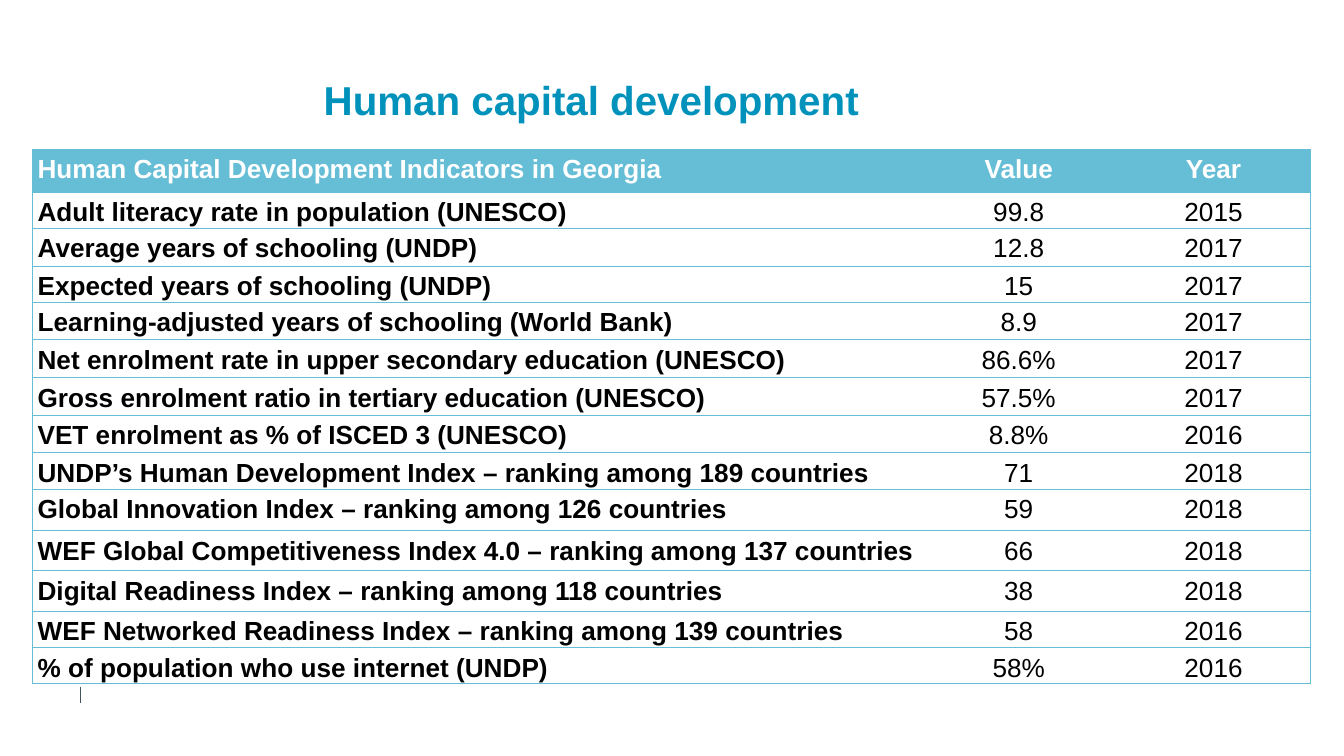
from dataclasses import dataclass

from lxml import etree
from pptx import Presentation
from pptx.dml.color import RGBColor
from pptx.enum import shapes, text
from pptx.oxml.ns import qn
from pptx.util import Inches, Pt


@dataclass(frozen=True)
class Theme:
    font: str = "Arial"
    title_size: float = 21.6
    table_size: float = 14
    rule_width: float = 0.5
    title: str = "0092BB"
    accent: str = "66BED6"
    header_text: str = "FFFFFF"
    body_text: str = "000000"
    footer_rule: str = "455560"


@dataclass(frozen=True)
class Indicator:
    name: str
    value: str
    year: str
    height: float


THEME = Theme()
NO_GRID_STYLE = "{2D5ABB26-0587-4C30-8999-92F81FD0307C}"
COLUMN_WIDTHS = (6.61, 1.46, 1.44)
INDICATORS = [
    Indicator("Human Capital Development Indicators in Georgia", "Value", "Year", 0.32),
    Indicator("Adult literacy rate in population (UNESCO)", "99.8", "2015", 0.27),
    Indicator("Average years of schooling (UNDP)", "12.8", "2017", 0.28),
    Indicator("Expected years of schooling (UNDP)", "15", "2017", 0.27),
    Indicator("Learning-adjusted years of schooling (World Bank)", "8.9", "2017", 0.28),
    Indicator("Net enrolment rate in upper secondary education (UNESCO)", "86.6%", "2017", 0.28),
    Indicator("Gross enrolment ratio in tertiary education (UNESCO)", "57.5%", "2017", 0.28),
    Indicator("VET enrolment as % of ISCED 3 (UNESCO)", "8.8%", "2016", 0.28),
    Indicator("UNDP’s Human Development Index – ranking among 189 countries", "71", "2018", 0.27),
    Indicator("Global Innovation Index – ranking among 126 countries", "59", "2018", 0.31),
    Indicator("WEF Global Competitiveness Index 4.0 – ranking among 137 countries",
              "66", "2018", 0.3),
    Indicator("Digital Readiness Index – ranking among 118 countries", "38", "2018", 0.3),
    Indicator("WEF Networked Readiness Index – ranking among 139 countries", "58", "2016", 0.27),
    Indicator("% of population who use internet (UNDP)", "58%", "2016", 0.27),
]


def style_font(paragraph, size: float, color: str, bold: bool) -> None:
    font = paragraph.font
    font.name, font.size, font.bold = THEME.font, Pt(size), bold
    font.color.rgb = RGBColor.from_string(color)


def set_borders(cell, ruled: str) -> None:
    """Rule the sides named in `ruled` (letters of LRTB) and clear the others."""
    properties = cell._tc.get_or_add_tcPr()
    for position, side in enumerate("LRTB"):
        line = etree.Element(qn(f"a:ln{side}"), w=str(Pt(THEME.rule_width)))
        if side in ruled:
            fill = etree.SubElement(line, qn("a:solidFill"))
            etree.SubElement(fill, qn("a:srgbClr"), val=THEME.accent)
        else:
            etree.SubElement(line, qn("a:noFill"))
        properties.insert(position, line)


def fill_cell(cell, content: str, is_header: bool, column: int) -> None:
    cell.margin_left = cell.margin_right = Inches(0.04)
    cell.margin_top = cell.margin_bottom = 0
    if is_header:
        cell.fill.solid()
        cell.fill.fore_color.rgb = RGBColor.from_string(THEME.accent)
    else:
        cell.fill.background()
    cell.text = content
    paragraph = cell.text_frame.paragraphs[0]
    paragraph.alignment = text.PP_ALIGN.CENTER if column else text.PP_ALIGN.LEFT
    paragraph.line_spacing = 1.2
    style_font(paragraph, THEME.table_size,
               THEME.header_text if is_header else THEME.body_text,
               bold=is_header or column == 0)
    outer_side = {0: "L", len(COLUMN_WIDTHS) - 1: "R"}.get(column, "")
    set_borders(cell, "TB" + outer_side)


def add_indicator_table(slide) -> None:
    frame = slide.shapes.add_table(
        len(INDICATORS), len(COLUMN_WIDTHS), Inches(0.24), Inches(1.11),
        Inches(sum(COLUMN_WIDTHS)), Inches(sum(row.height for row in INDICATORS)))
    table = frame.table
    table.horz_banding = False
    table._tbl.tblPr.find(qn("a:tableStyleId")).text = NO_GRID_STYLE
    for column, width in zip(table.columns, COLUMN_WIDTHS):
        column.width = Inches(width)
    for index, indicator in enumerate(INDICATORS):
        table.rows[index].height = Inches(indicator.height)
        contents = (indicator.name, indicator.value, indicator.year)
        for column, content in enumerate(contents):
            fill_cell(table.cell(index, column), content, index == 0, column)


def add_title(slide) -> None:
    title = slide.shapes.add_textbox(Inches(0.14), Inches(0.56), Inches(8.52), Inches(0.41))
    frame = title.text_frame
    frame.word_wrap = True
    frame.vertical_anchor = text.MSO_ANCHOR.MIDDLE
    frame.margin_left = frame.margin_right = frame.margin_top = frame.margin_bottom = 0
    frame.text = "Human capital development"
    paragraph = frame.paragraphs[0]
    paragraph.alignment = text.PP_ALIGN.CENTER
    paragraph.line_spacing = 0.9
    style_font(paragraph, THEME.title_size, THEME.title, bold=True)


def add_footer_rule(slide) -> None:
    rule = slide.shapes.add_connector(
        shapes.MSO_CONNECTOR.STRAIGHT, Inches(0.6), Inches(5.11), Inches(0.6), Inches(5.23))
    rule.line.color.rgb = RGBColor.from_string(THEME.footer_rule)
    rule.line.width = Pt(0.25)
    etree.SubElement(rule._element.spPr, qn("a:effectLst"))


def main() -> None:
    deck = Presentation()
    deck.slide_width = Inches(10)
    deck.slide_height = deck.slide_width * 9 // 16
    slide = deck.slides.add_slide(deck.slide_layouts[6])
    add_footer_rule(slide)
    add_indicator_table(slide)
    add_title(slide)
    deck.save("out.pptx")


if __name__ == "__main__":
    main()
